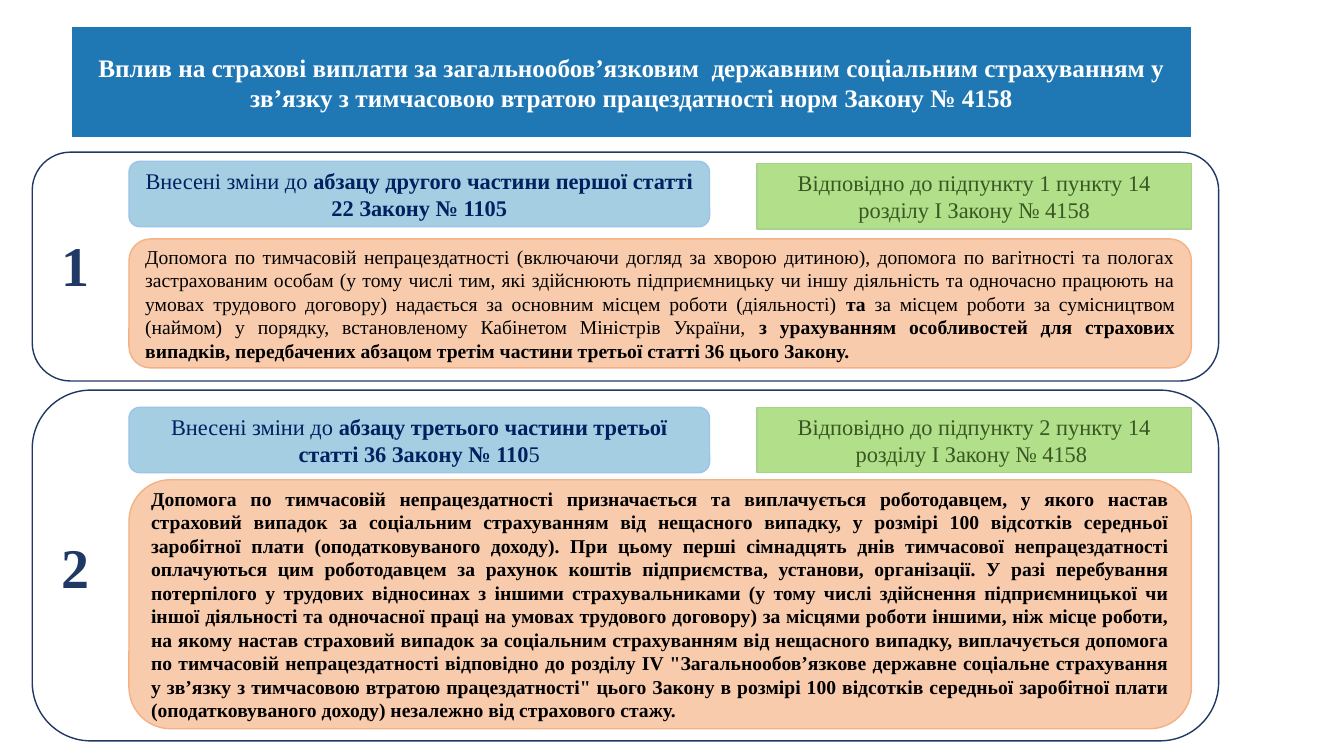
from dataclasses import dataclass
from typing import NamedTuple, Optional

from pptx import Presentation
from pptx.dml.color import RGBColor
from pptx.enum.shapes import MSO_SHAPE as Preset
from pptx.enum.text import MSO_ANCHOR as Anchor, MSO_AUTO_SIZE as AutoSize, PP_ALIGN as Align
from pptx.shapes.shapetree import SlideShapes
from pptx.text.text import TextFrame
from pptx.util import Emu, Pt

EMU_PER_PX = 9144  # 100 px to the inch


@dataclass(frozen=True)
class Theme:
    font: str = "Times New Roman"
    title_size: int = 18
    label_size: int = 16
    body_size: int = 14
    number_size: int = 40
    white: str = "FFFFFF"
    black: str = "000000"
    title_fill: str = "1F78B4"
    frame_line: str = "203864"
    change_fill: str = "A6CEE3"
    change_line: str = "9DC3E6"
    change_text: str = "002060"
    basis_fill: str = "B2DF8A"
    basis_line: str = "A9D18E"
    basis_text: str = "385723"
    body_fill: str = "F8CBAD"
    body_line: str = "F4B183"


THEME = Theme()


class Box(NamedTuple):
    left: int
    top: int
    width: int
    height: int

    def emu(self) -> list[Emu]:
        return [Emu(length * EMU_PER_PX) for length in self]


class Span(NamedTuple):
    text: str
    bold: bool = False


@dataclass(frozen=True)
class Style:
    preset: Preset
    fill: Optional[str]
    line: Optional[str]
    color: str = THEME.black
    size: int = THEME.body_size
    align: Align = Align.CENTER


TITLE = Style(Preset.FLOWCHART_PROCESS, THEME.title_fill, None, THEME.white, THEME.title_size)
CHANGE = Style(Preset.FLOWCHART_ALTERNATE_PROCESS, THEME.change_fill, THEME.change_line,
               THEME.change_text, THEME.label_size)
BASIS = Style(Preset.FLOWCHART_PROCESS, THEME.basis_fill, THEME.basis_line,
              THEME.basis_text, THEME.label_size)
BODY = Style(Preset.FLOWCHART_ALTERNATE_PROCESS, THEME.body_fill, THEME.body_line,
             align=Align.JUSTIFY)
FRAME = Style(Preset.FLOWCHART_ALTERNATE_PROCESS, None, THEME.frame_line)


@dataclass(frozen=True)
class Section:
    """One amendment: vertical places in px and the wording of its parts."""
    number: str
    frame_top: int
    frame_height: int
    change_top: int
    basis_top: int
    body_top: int
    body_height: int
    number_top: int
    change: list[Span]
    basis: list[Span]
    body: list[Span]


HEADING = [Span(
    "Вплив на страхові виплати за загальнообов’язковим  державним соціальним страхуванням "
    "у зв’язку з тимчасовою втратою працездатності норм Закону № 4158", True)]

SECTIONS = [
    Section(
        "1", 151, 227, 160, 162, 237, 128, 224,
        change=[
            Span("Внесені зміни до "),
            Span("абзацу другого частини першої статті 22 Закону № 1105", True),
        ],
        basis=[Span("Відповідно до підпункту 1 пункту 14 розділу І Закону № 4158")],
        body=[
            Span("Допомога по тимчасовій непрацездатності (включаючи догляд за хворою дитиною), "
                 "допомога по вагітності та пологах застрахованим особам (у тому числі тим, які "
                 "здійснюють підприємницьку чи іншу діяльність та одночасно працюють на умовах "
                 "трудового договору) надається за основним місцем роботи (діяльності) "),
            Span("та", True),
            Span(" за місцем роботи за сумісництвом (наймом) у порядку, встановленому "
                 "Кабінетом Міністрів України, "),
            Span("з урахуванням особливостей для страхових випадків, передбачених абзацом "
                 "третім частини третьої статті 36 цього Закону.", True),
        ],
    ),
    Section(
        "2", 387, 348, 404, 404, 476, 247, 523,
        change=[
            Span("Внесені зміни до "),
            Span("абзацу третього частини третьої статті 36 Закону № 110", True),
            Span("5"),
        ],
        basis=[Span("Відповідно до підпункту 2 пункту 14 розділу І Закону № 4158 ")],
        body=[
            Span("Допомога по тимчасовій непрацездатності призначається та виплачується "
                 "роботодавцем, у якого настав страховий випадок за соціальним страхуванням від "
                 "нещасного випадку, у розмірі 100 відсотків середньої заробітної плати "
                 "(оподатковуваного доходу). ", True),
            Span("При цьому перші сімнадцять днів тимчасової непрацездатності оплачуються цим "
                 "роботодавцем за рахунок коштів підприємства, установи, організації. ", True),
            Span("У разі перебування потерпілого у трудових відносинах з іншими "
                 "страхувальниками (у тому числі здійснення підприємницької чи іншої діяльності "
                 "та одночасної праці на умовах трудового договору) за місцями роботи іншими, "
                 "ніж місце роботи, на якому настав страховий випадок за соціальним "
                 "страхуванням від нещасного випадку, ", True),
            Span("виплачується допомога по тимчасовій непрацездатності відповідно до розділу IV "
                 "\"Загальнообов’язкове державне соціальне страхування у зв’язку з тимчасовою "
                 "втратою працездатності\" цього Закону в розмірі 100 відсотків середньої "
                 "заробітної плати (оподатковуваного доходу) незалежно від страхового стажу.",
                 True),
        ],
    ),
]


def write(frame: TextFrame, spans: list[Span], color: str, size: int, align: Align) -> None:
    paragraph = frame.paragraphs[0]
    paragraph.alignment = align
    for span in spans:
        run = paragraph.add_run()
        run.text = span.text
        run.font.name = THEME.font
        run.font.size = Pt(size)
        run.font.bold = span.bold
        run.font.color.rgb = RGBColor.from_string(color)


def add_panel(shapes: SlideShapes, box: Box, style: Style, spans: list[Span]) -> None:
    panel = shapes.add_shape(style.preset, *box.emu())
    panel.shadow.inherit = False
    if style.fill:
        panel.fill.solid()
        panel.fill.fore_color.rgb = RGBColor.from_string(style.fill)
    else:
        panel.fill.background()
    if style.line:
        panel.line.color.rgb = RGBColor.from_string(style.line)
        panel.line.width = Pt(1)
    else:
        panel.line.fill.background()
    panel.text_frame.word_wrap = True
    panel.text_frame.vertical_anchor = Anchor.MIDDLE
    write(panel.text_frame, spans, style.color, style.size, style.align)


def add_number(shapes: SlideShapes, box: Box, number: str) -> None:
    frame = shapes.add_textbox(*box.emu()).text_frame
    frame.word_wrap = False
    frame.auto_size = AutoSize.SHAPE_TO_FIT_TEXT
    write(frame, [Span(number, True)], THEME.frame_line, THEME.number_size, Align.LEFT)


def add_section(shapes: SlideShapes, section: Section) -> None:
    add_panel(shapes, Box(128, section.change_top, 576, 65), CHANGE, section.change)
    add_panel(shapes, Box(751, section.basis_top, 431, 65), BASIS, section.basis)
    add_panel(shapes, Box(128, section.body_top, 1054, section.body_height), BODY, section.body)
    add_panel(shapes, Box(32, section.frame_top, 1177, section.frame_height), FRAME, [])
    add_number(shapes, Box(51, section.number_top, 48, 77), section.number)


def main() -> None:
    deck = Presentation()
    deck.slide_height = Emu(750 * EMU_PER_PX)
    deck.slide_width = Emu(deck.slide_height * 16 // 9)
    shapes = deck.slides.add_slide(deck.slide_layouts[6]).shapes
    add_panel(shapes, Box(71, 27, 1111, 109), TITLE, HEADING)
    for section in SECTIONS:
        add_section(shapes, section)
    deck.save("out.pptx")


if __name__ == "__main__":
    main()
